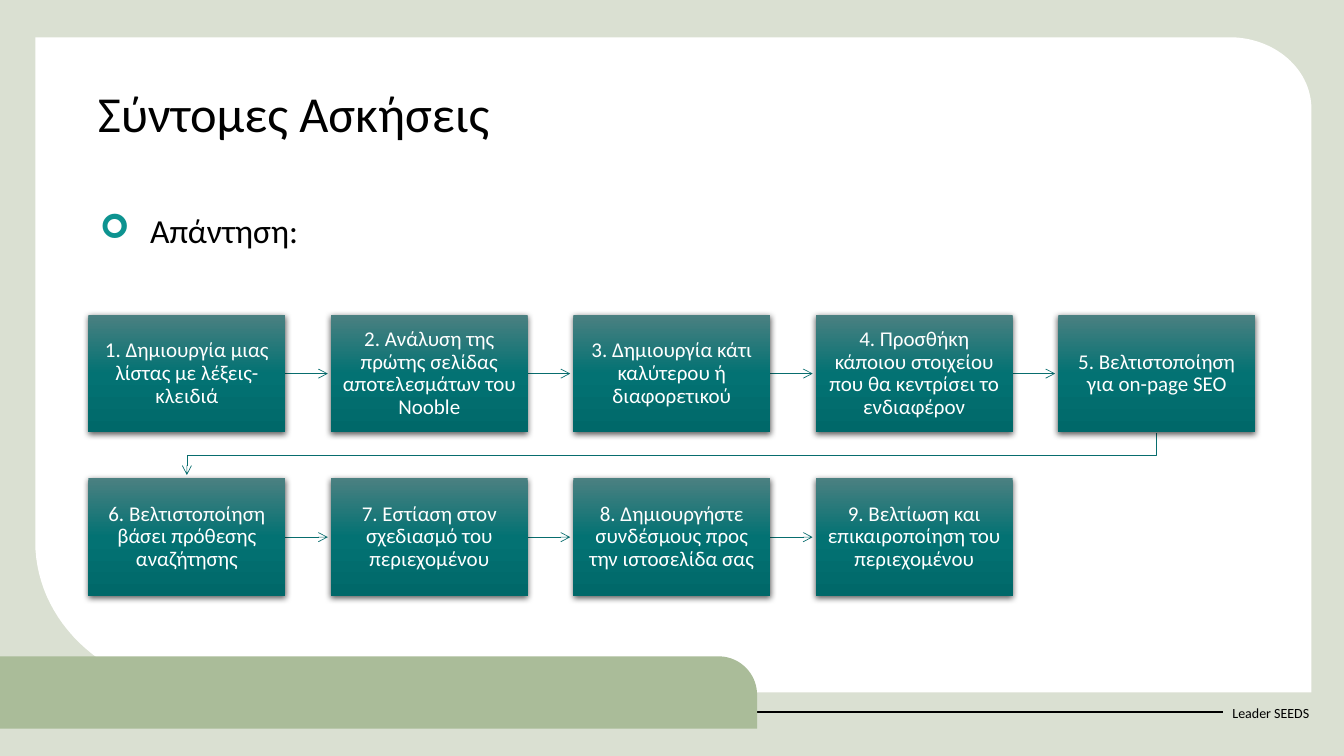
from copy import deepcopy
from math import cos, radians, sin

from lxml import etree
from pptx import Presentation
from pptx.dml.color import RGBColor
from pptx.enum.shapes import MSO_CONNECTOR, MSO_SHAPE
from pptx.enum.text import MSO_ANCHOR, MSO_AUTO_SIZE, PP_ALIGN
from pptx.oxml import parse_xml
from pptx.oxml.ns import nsdecls, qn
from pptx.util import Cm, Pt

FONT = "Calibri"
LEFT, CENTER = PP_ALIGN.LEFT, PP_ALIGN.CENTER
TOP, MIDDLE = MSO_ANCHOR.TOP, MSO_ANCHOR.MIDDLE
NO_AUTOFIT = MSO_AUTO_SIZE.NONE
STRAIGHT, RECTANGLE = MSO_CONNECTOR.STRAIGHT, MSO_SHAPE.RECTANGLE

BLACK = RGBColor(0x00, 0x00, 0x00)
WHITE = RGBColor(0xFF, 0xFF, 0xFF)
PALE_GREEN = RGBColor(0xDA, 0xE0, 0xD2)
BAR_GREEN = RGBColor(0xAA, 0xBC, 0x99)
ARROW_TEAL = RGBColor(0x08, 0x6D, 0x6E)
BOX_STOPS = [(0, RGBColor(0x4B, 0x80, 0x81)),
             (0.5, RGBColor(0x03, 0x72, 0x73)),
             (1, RGBColor(0x00, 0x68, 0x69))]

# Flow grid in centimetres
COLUMNS = 5
FLOW_LEFT, FLOW_TOP = 2.23, 7.93
BOX_WIDTH, BOX_HEIGHT = 4.96, 2.97
GAP, ARROW_LENGTH = 1.15, 1.07

STEPS = [
    "1. Δημιουργία μιας λίστας με λέξεις-κλειδιά",
    "2. Ανάλυση της πρώτης σελίδας αποτελεσμάτων του Nooble",
    "3. Δημιουργία κάτι καλύτερου ή διαφορετικού",
    "4. Προσθήκη κάποιου στοιχείου που θα κεντρίσει το ενδιαφέρον",
    "5. Βελτιστοποίηση για on-page SEO",
    "6. Βελτιστοποίηση βάσει πρόθεσης αναζήτησης",
    "7. Εστίαση στον σχεδιασμό του περιεχομένου",
    "8. Δημιουργήστε συνδέσμους προς την ιστοσελίδα σας",
    "9. Βελτίωση και επικαιροποίηση του περιεχομένου",
]


def rounded_corner(center_x, center_y, radius_x, radius_y, start):
    """Points of a quarter ellipse, clockwise from the start angle."""
    angles = [radians(start + step) for step in range(0, 91, 3)]
    return [(center_x + radius_x * cos(angle), center_y + radius_y * sin(angle))
            for angle in angles]


def add_outline(shapes, points, close):
    """Freeform through points given in centimetres."""
    points = [(Cm(x), Cm(y)) for x, y in points]
    builder = shapes.build_freeform(*points[0])
    builder.add_line_segments(points[1:], close=close)
    shape = builder.convert_to_shape()
    shape.shadow.inherit = False
    return shape


presentation = Presentation()
presentation.slide_width = Cm(33.87)
presentation.slide_height = Cm(19.05)
slide = presentation.slides.add_slide(presentation.slide_layouts[1])
shapes = slide.shapes
title, body = slide.placeholders

# Background, white panel, footer line and green bar
slide.background.fill.solid()
slide.background.fill.fore_color.rgb = PALE_GREEN

panel_points = [(0.89, 0.94), *rounded_corner(30.99, 2.74, 2.06, 1.8, -90),
                (33.05, 17.45), *rounded_corner(5.21, 13.66, 4.32, 3.79, 90)]
panel = add_outline(shapes, panel_points, close=True)

footer_line = shapes.add_connector(STRAIGHT, 0, Cm(17.95), Cm(30.81), Cm(17.95))
footer_line.line.color.rgb = BLACK
footer_line.line.width = Pt(1.5)
etree.SubElement(footer_line._element.spPr, qn("a:effectLst"))

bar_points = [(0, 18.36), (0, 16.54),
              *rounded_corner(18.11, 17.51, 0.97, 0.97, -90), (19.08, 18.36)]
bar = add_outline(shapes, bar_points, close=True)

for shape, color in ((panel, WHITE), (bar, BAR_GREEN)):
    shape.fill.solid()
    shape.fill.fore_color.rgb = color
    shape.line.fill.background()

# Title, answer heading and footer text
for placeholder in (title, body):
    shapes._spTree.append(placeholder._element)
footer = shapes.add_textbox(Cm(30.81), Cm(17.45), Cm(2.57), Cm(1.02))

for shape, text, size, anchor, spacing in (
        (title, "Σύντομες Ασκήσεις", 36, TOP, 0.9),
        (body, "Απάντηση:", 24, TOP, 0.9),
        (footer, "Leader SEEDS", 10, MIDDLE, 1.0)):
    text_frame = shape.text_frame
    text_frame.text = text
    text_frame.word_wrap = True
    text_frame.auto_size = NO_AUTOFIT
    text_frame.vertical_anchor = anchor
    paragraph = text_frame.paragraphs[0]
    paragraph.alignment = LEFT
    paragraph.line_spacing = spacing
    paragraph.space_before = Pt(0)
    font = paragraph.runs[0].font
    font.name, font.size = FONT, Pt(size)
    font.color.rgb = BLACK

title.left, title.top, title.width, title.height = Cm(2.21), Cm(2.11), Cm(29.44), Cm(2.24)
body.left, body.top, body.width, body.height = Cm(2.21), Cm(5.28), Cm(29.44), Cm(11.1)

bullet = body.text_frame.paragraphs[0]._p.get_or_add_pPr()
bullet.set("marL", str(Cm(1.32)))
bullet.set("indent", str(Cm(-1.27)))
for xml in (f'<a:buClr {nsdecls("a")}><a:srgbClr val="0D9390"/></a:buClr>',
            f'<a:buFont {nsdecls("a")} typeface="Wingdings"/>',
            f'<a:buChar {nsdecls("a")} char="➢"/>'):
    bullet.append(parse_xml(xml))

# Step boxes, each with an arrow to the next one
arrows = []
for index, step in enumerate(STEPS):
    row, column = divmod(index, COLUMNS)
    left = FLOW_LEFT + column * (BOX_WIDTH + GAP)
    top = FLOW_TOP + row * (BOX_HEIGHT + GAP)
    right, bottom = left + BOX_WIDTH, top + BOX_HEIGHT

    if column == COLUMNS - 1:
        first_center, last_center = FLOW_LEFT + BOX_WIDTH / 2, left + BOX_WIDTH / 2
        turn = bottom + GAP / 2
        arrow = add_outline(shapes, [(last_center, bottom), (last_center, turn),
                                     (first_center, turn),
                                     (first_center, bottom + ARROW_LENGTH)], close=False)
        arrow.fill.background()
        arrows.append(arrow)
    elif index < len(STEPS) - 1:
        middle = Cm(top + BOX_HEIGHT / 2)
        arrow = shapes.add_connector(STRAIGHT, Cm(right), middle,
                                     Cm(right + ARROW_LENGTH), middle)
        etree.SubElement(arrow._element.spPr, qn("a:effectLst"))
        arrows.append(arrow)

    box = shapes.add_shape(RECTANGLE, Cm(left), Cm(top), Cm(BOX_WIDTH), Cm(BOX_HEIGHT))
    box.line.fill.background()
    box.fill.gradient()
    box.fill.gradient_angle = 270
    stop_list = box._element.spPr.find(".//" + qn("a:gsLst"))
    stop_list.append(deepcopy(stop_list[1]))
    for stop, (position, color) in zip(box.fill.gradient_stops, BOX_STOPS):
        stop.position = position
        stop.color.rgb = color

    box.shadow.inherit = False
    box._element.spPr.find(qn("a:effectLst")).append(parse_xml(
        f'<a:outerShdw {nsdecls("a")} blurRad="{Pt(4.5)}" dist="{Pt(1.5)}" dir="5400000" '
        'algn="ctr" rotWithShape="0"><a:srgbClr val="000000"><a:alpha val="63000"/>'
        '</a:srgbClr></a:outerShdw>'))

    text_frame = box.text_frame
    text_frame.text = step
    text_frame.word_wrap = True
    text_frame.vertical_anchor = MIDDLE
    text_frame.margin_left = text_frame.margin_right = Cm(0.3)
    text_frame.margin_top = text_frame.margin_bottom = Cm(0.3)
    paragraph = text_frame.paragraphs[0]
    paragraph.alignment = CENTER
    paragraph.line_spacing = 0.9
    font = paragraph.runs[0].font
    font.name, font.size = FONT, Pt(15)
    font.color.rgb = WHITE

# Arrow lines and heads
for arrow in arrows:
    arrow.line.color.rgb = ARROW_TEAL
    arrow.line.width = Pt(0.5)
    etree.SubElement(arrow.line._get_or_add_ln(), qn("a:tailEnd"), type="arrow")

presentation.save("out.pptx")
